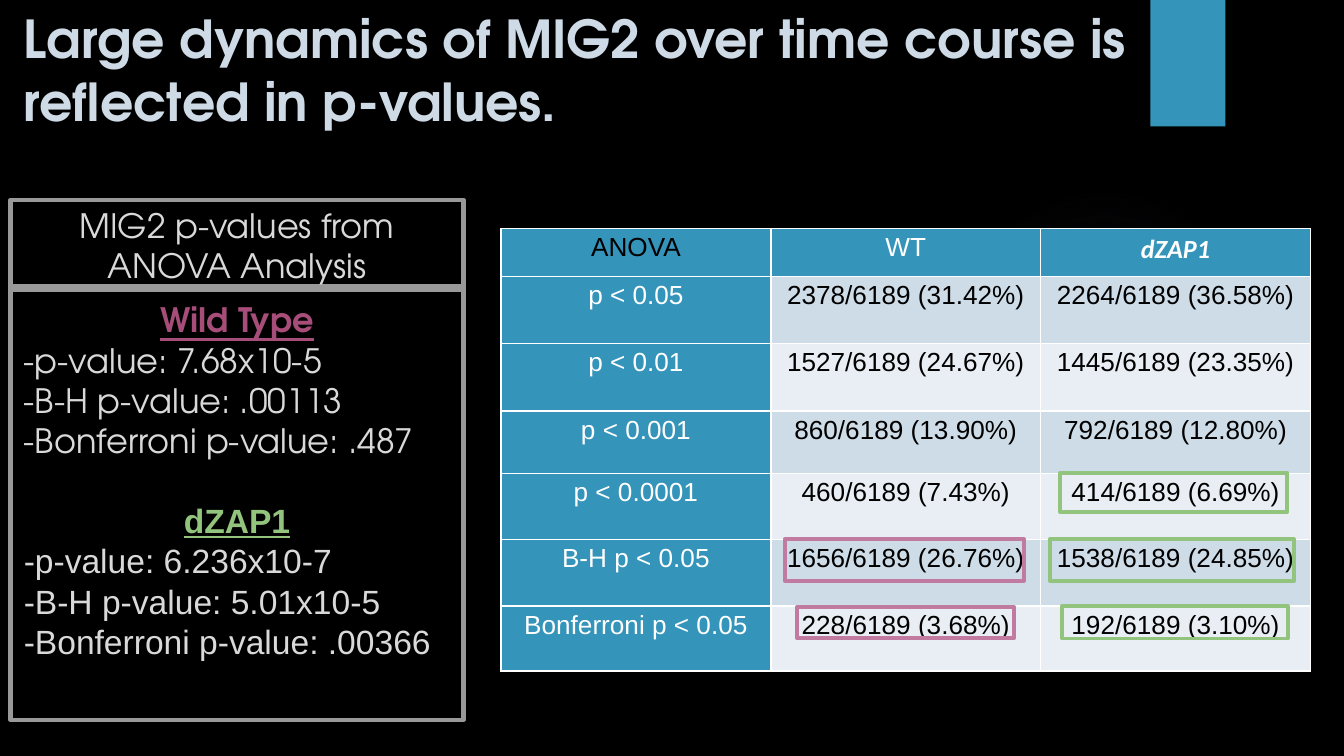
from lxml.etree import SubElement
from pptx import Presentation
from pptx.dml.color import RGBColor
from pptx.enum.shapes import MSO_SHAPE as Shape
from pptx.enum.text import MSO_ANCHOR as Anchor, MSO_AUTO_SIZE as AutoSize, PP_ALIGN as Align
from pptx.oxml.ns import qn
from pptx.util import Cm, Pt

DISPLAY, PLAIN = "TeX Gyre Adventor", "Arial"
BLUE, WHITE, BLACK = "3494BA", "FFFFFF", "000000"
GREY, PALE = "999999", "D9D9D9"
GREEN, PINK = "93C47D", "C27BA0"
BANDS = ("CEDCE7", "E8EEF3")


def rgb(value):
    return RGBColor.from_string(value)


class SlideBuilder:
    def __init__(self, deck):
        self.slide = deck.slides.add_slide(deck.slide_layouts[5])
        background = self.slide.background.fill
        background.solid()
        background.fore_color.rgb = rgb(BLACK)

    def style(self, paragraph, size, font, color, align=Align.LEFT,
              bold=False, italic=False, underline=False):
        paragraph.alignment = align
        for run in paragraph.runs:
            run.font.size, run.font.name = Pt(size), font
            run.font.color.rgb = rgb(color)
            run.font.bold, run.font.italic = bold, italic
            run.font.underline = underline

    def frame(self, text_frame, anchor):
        text_frame.word_wrap = True
        text_frame.auto_size = AutoSize.NONE
        text_frame.vertical_anchor = anchor
        text_frame.margin_left = text_frame.margin_right = Cm(0.25)
        text_frame.margin_top = text_frame.margin_bottom = Cm(0.25)

    def title(self, box, wording):
        title = self.slide.shapes.title
        title.left, title.top, title.width, title.height = map(Cm, box)
        self.frame(title.text_frame, Anchor.BOTTOM)
        title.text_frame.text = wording
        self.style(title.text_frame.paragraphs[0], 28, DISPLAY, "CEDBE6", bold=True)

    def shape(self, box, kind=Shape.RECTANGLE, fill=None, line=None, weight=2):
        shape = self.slide.shapes.add_shape(kind, *map(Cm, box))
        shape.shadow.inherit = False
        if fill:
            shape.fill.solid()
            shape.fill.fore_color.rgb = rgb(fill)
        else:
            shape.fill.background()
        if line:
            shape.line.color.rgb = rgb(line)
            shape.line.width = Pt(weight)
        else:
            shape.line.fill.background()
        return shape

    def glow(self, box, color, stops):
        properties = self.shape(box, Shape.OVAL)._element.spPr
        no_fill = properties.find(qn("a:noFill"))
        gradient = SubElement(properties, qn("a:gradFill"))
        properties.replace(no_fill, gradient)
        stop_list = SubElement(gradient, qn("a:gsLst"))
        for position, opacity in stops:
            stop = SubElement(stop_list, qn("a:gs"), pos=str(position * 1000))
            tint = SubElement(stop, qn("a:srgbClr"), val=color)
            SubElement(tint, qn("a:alpha"), val=str(opacity * 1000))
        radial = SubElement(gradient, qn("a:path"), path="circle")
        SubElement(radial, qn("a:fillToRect"), l="50000", t="50000", r="50000", b="50000")

    def panel(self, box, anchor, entries):
        text_frame = self.shape(box, line=GREY, weight=2.25).text_frame
        self.frame(text_frame, anchor)
        text_frame.text = "\n".join(wording for wording, _ in entries)
        for paragraph, (_, look) in zip(text_frame.paragraphs, entries):
            self.style(paragraph, 18, **look)
        return text_frame

    def cell_border(self, cell):
        properties = cell._tc.get_or_add_tcPr()
        for position, side in enumerate(("a:lnL", "a:lnR", "a:lnT", "a:lnB")):
            border = properties.makeelement(qn(side), {"w": str(Pt(1))})
            solid = SubElement(border, qn("a:solidFill"))
            SubElement(solid, qn("a:srgbClr"), val=WHITE)
            properties.insert(position, border)

    def table(self, left, top, column_width, heights, rows):
        count = len(rows[0])
        table = self.slide.shapes.add_table(
            len(rows), count, Cm(left), Cm(top),
            Cm(column_width * count), Cm(sum(heights))).table
        for column in table.columns:
            column.width = Cm(column_width)
        for r, (height, row) in enumerate(zip(heights, rows)):
            table.rows[r].height = Cm(height)
            for c, wording in enumerate(row):
                cell = table.cell(r, c)
                heading = r == 0 or c == 0
                strain = r == 0 and c == 2
                cell.margin_left = cell.margin_right = Cm(0.18)
                cell.margin_top = cell.margin_bottom = 0
                cell.fill.solid()
                cell.fill.fore_color.rgb = rgb(BLUE if heading else BANDS[(r - 1) % 2])
                self.cell_border(cell)
                cell.text_frame.text = wording
                paragraph = cell.text_frame.paragraphs[0]
                paragraph.line_spacing = 1.15
                color = WHITE if heading and (r, c) != (0, 0) else BLACK
                self.style(paragraph, 14, "Calibri" if strain else PLAIN, color,
                           Align.CENTER, bold=strain, italic=strain)


def strain_entries(name, font, color, values):
    heading = dict(font=font, color=color, align=Align.CENTER, bold=True, underline=True)
    labels = ("p-value", "B-H p-value", "Bonferroni p-value")
    return [(name, heading)] + [
        (f"-{label}: {value}", dict(font=font, color=PALE))
        for label, value in zip(labels, values)]


def main():
    deck = Presentation()
    deck.slide_width, deck.slide_height = Cm(25.4), Cm(14.29)
    builder = SlideBuilder(deck)

    builder.glow((17.93, 3.51, 5.87, 5.87), "7F7B9A", [(0, 7), (36, 6), (69, 0)])
    builder.shape((21.74, 0, 1.42, 2.39), fill=BLUE)
    builder.title((0.2, 0.36, 23.93, 2.39),
                  "Large dynamics of MIG2 over time course is reflected in p-values.")

    wild_type = strain_entries("Wild Type", DISPLAY, "A64D79",
                               ("7.68x10-5", ".00113", ".487"))
    deletion = strain_entries("dZAP1", PLAIN, GREEN,
                              ("6.236x10-7", "5.01x10-5", ".00366"))
    results = builder.panel((0.2, 5.41, 8.56, 8.2), Anchor.TOP, wild_type + deletion)
    results.paragraphs[len(wild_type)].space_before = Pt(21)

    caption = dict(font=DISPLAY, color=PALE, align=Align.CENTER)
    builder.panel((0.2, 3.78, 8.56, 1.7), Anchor.MIDDLE,
                  [("MIG2 p-values from", caption), ("ANOVA Analysis", caption)])

    builder.table(9.47, 4.32, 5.1, (0.91, 1.26, 1.28, 1.18, 1.25, 1.26, 1.22), [
        ("ANOVA", "WT", "dZAP1"),
        ("p < 0.05", "2378/6189 (31.42%)", "2264/6189 (36.58%)"),
        ("p < 0.01", "1527/6189 (24.67%)", "1445/6189 (23.35%)"),
        ("p < 0.001", "860/6189 (13.90%)", "792/6189 (12.80%)"),
        ("p < 0.0001", "460/6189 (7.43%)", "414/6189 (6.69%)"),
        ("B-H p < 0.05", "1656/6189 (26.76%)", "1538/6189 (24.85%)"),
        ("Bonferroni p < 0.05", "228/6189 (3.68%)", "192/6189 (3.10%)"),
    ])

    for color, highlight in (
            (GREEN, (20.04, 8.94, 4.29, 0.74)),
            (GREEN, (19.84, 10.19, 4.62, 0.79)),
            (GREEN, (20.07, 11.46, 4.27, 0.61)),
            (PINK, (14.83, 10.19, 4.52, 0.79)),
            (PINK, (15.06, 11.48, 4.11, 0.58))):
        builder.shape(highlight, line=color)

    deck.save("out.pptx")


if __name__ == "__main__":
    main()
